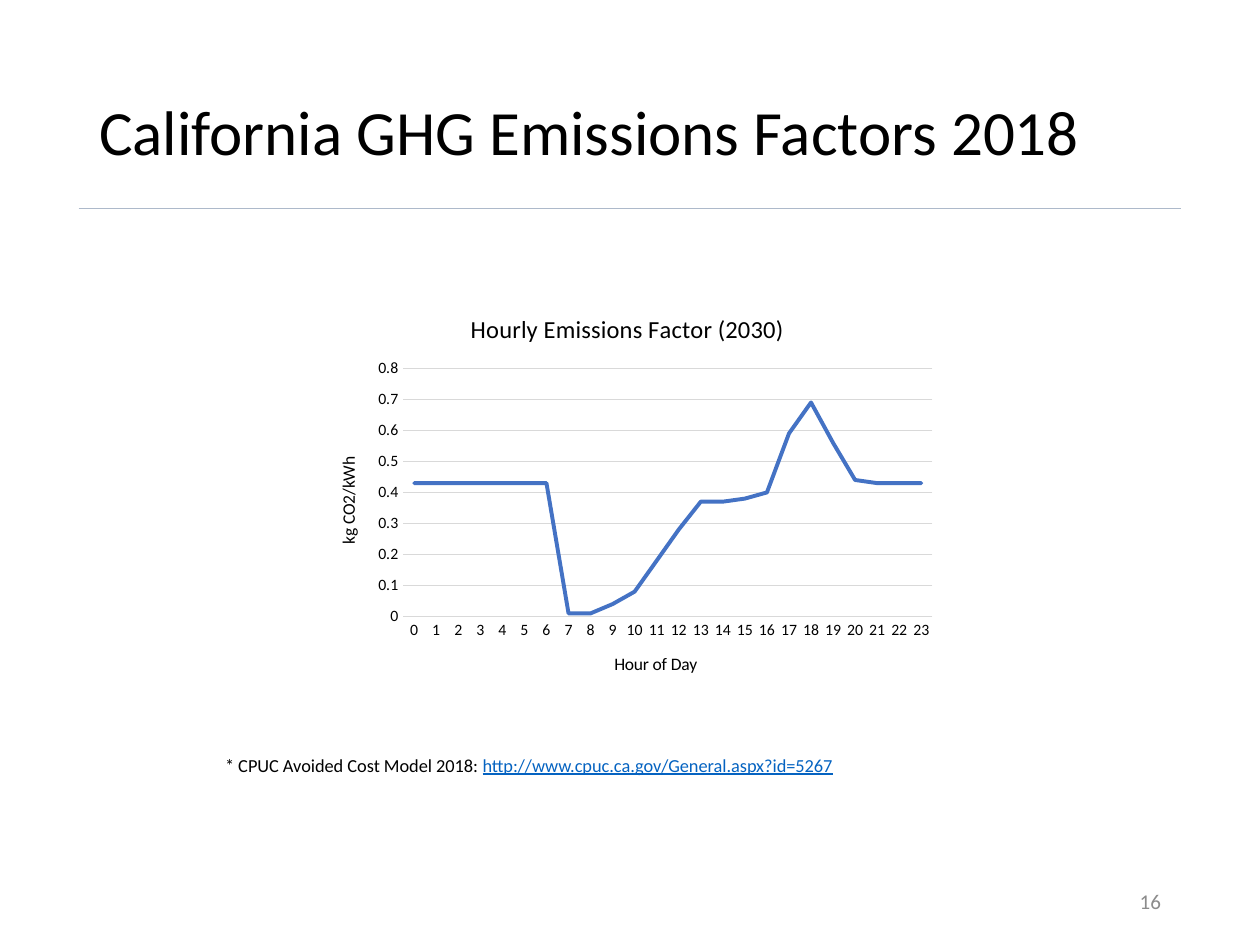
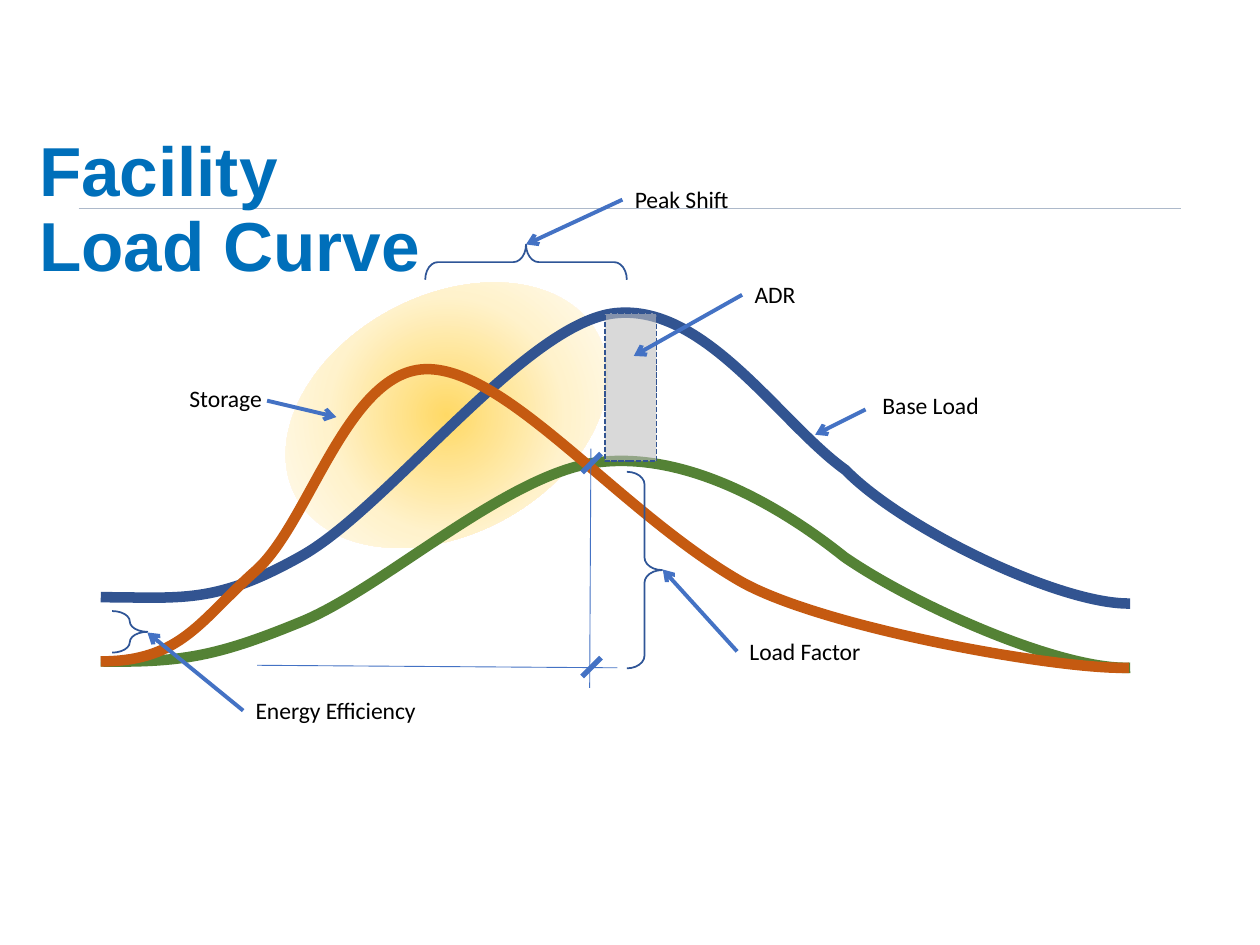
from lxml import etree
from pptx import Presentation
from pptx import util as u
from pptx.chart.data import CategoryChartData
from pptx.dml.color import RGBColor
from pptx.enum import chart as ch, dml, shapes, text
from pptx.oxml import parse_xml
from pptx.oxml.ns import nsdecls, qn

BLACK = RGBColor(0, 0, 0)
GRAY = RGBColor(0x8C, 0x8C, 0x8C)
PALE = RGBColor(0xD9, 0xD9, 0xD9)
SILVER = RGBColor(0xBF, 0xBF, 0xBF)
STEEL = RGBColor(0xAD, 0xB9, 0xCA)
BLUE = RGBColor(0x44, 0x72, 0xC4)
NAVY = RGBColor(0x32, 0x54, 0x91)
DEEP = RGBColor(0x2F, 0x55, 0x97)
GREEN = RGBColor(0x54, 0x82, 0x35)
RUST = RGBColor(0xC5, 0x5A, 0x11)
SKY = RGBColor(0x00, 0x6F, 0xBA)
LINK = RGBColor(0x05, 0x63, 0xC1)
GLOW = ((0, "FFD966"), (43, "FFF2CC"), (85, "FFFFFF"))

WIDE, HIGH = u.Inches(10), u.Inches(7.5)
CELL = WIDE / 100

HOURS = [str(h) for h in range(24)]
RATES = [0.43] * 7 + [0.01, 0.01, 0.04, 0.08, 0.18, 0.28, 0.37, 0.37, 0.38,
                      0.4, 0.59, 0.69, 0.56] + [0.44] + [0.43] * 3

BASE = [(8, 47.4), (14.4, 47.4), (17, 48), (23.8, 44.2), (30.6, 40.5),
        (41.3, 26.1), (48.5, 24.9), (55.8, 23.8), (61.8, 33.5), (67.1, 37.3),
        (71.7, 42), (84.2, 48), (89.7, 47.9)]
SAVED = [(8, 52.5), (14.4, 52.6), (17.2, 52.1), (23.8, 49.4), (30.3, 46.8),
         (40.2, 37.6), (47.4, 36.7), (54.5, 35.8), (62, 40.2), (67, 44.2),
         (72.5, 48), (84.1, 53.2), (89.7, 53)]
STORED = [(8, 52.5), (14.4, 52.5), (15.9, 49.2), (20.3, 45.3), (24.6, 41.5),
          (27.6, 29.2), (34, 29.3), (40.4, 29.4), (49.2, 40.6), (58.7, 46.1),
          (65.1, 49.8), (84.1, 53.2), (89.6, 53)]


def cells(*counts):
    """Turn counts of grid cells into lengths."""
    return [u.Emu(round(n * CELL)) for n in counts]


def style(font, size, color=BLACK, face="Calibri", bold=False):
    """Set the face, size and colour of a font."""
    font.name, font.size, font.bold = face, u.Pt(size), bold
    font.color.rgb = color


def write(slide, words, at, size, color=BLACK, face="Calibri", bold=False,
          align=None, anchor=text.MSO_ANCHOR.TOP, wrap=True, grow=False,
          space=None, inset=(1, 0.5)):
    """Add a text box; words is a string or a list of (string, colour, underline)."""
    box = slide.shapes.add_textbox(*cells(*at))
    frame = box.text_frame
    frame.word_wrap, frame.vertical_anchor = wrap, anchor
    if grow:
        frame.auto_size = text.MSO_AUTO_SIZE.SHAPE_TO_FIT_TEXT
    side, edge = cells(*inset)
    frame.margin_left = frame.margin_right = side
    frame.margin_top = frame.margin_bottom = edge
    para = frame.paragraphs[0]
    para.alignment, para.line_spacing = align, space
    parts = [(words, color, False)] if isinstance(words, str) else words
    for string, tint, under in parts:
        run = para.add_run()
        run.text = string
        style(run.font, size, tint, face, bold)
        if under:
            run.font.underline = True
    return box


def title(slide, words, at, size, **look):
    """Add a slide title."""
    write(slide, words, at, size, anchor=text.MSO_ANCHOR.MIDDLE, space=0.9, **look)


def link(slide, start, end, width, color=BLUE, arrow=False, box=None):
    """Draw a straight line, with an arrowhead or joined to a box's left side if asked."""
    line = slide.shapes.add_connector(shapes.MSO_CONNECTOR.STRAIGHT,
                                      *cells(*start, *end))
    if box is not None:
        line.begin_connect(box, 1)
    line.line.width = u.Pt(width)
    line.line.color.rgb = color
    if arrow:
        etree.SubElement(line.line._get_or_add_ln(), qn("a:tailEnd"), type="arrow")
    etree.SubElement(line._element.spPr, qn("a:effectLst"))
    return line


def label(slide, words, at, start, end, joined=True):
    """Add a label with an arrow from it."""
    box = write(slide, words, (*at, 3.3), 13.5, wrap=False, grow=True)
    link(slide, start, end, 2.25, arrow=True, box=box if joined else None)


def form(slide, kind, at, turn=0):
    """Add an unfilled preset shape without a shadow."""
    shape = slide.shapes.add_shape(kind, *cells(*at))
    shape.shadow.inherit = False
    shape.rotation = turn
    shape.fill.background()
    return shape


def brace(slide, at, turn=0):
    """Add a right brace."""
    shape = form(slide, shapes.MSO_SHAPE.RIGHT_BRACE, at, turn)
    shape.adjustments[0] = 0.36
    shape.line.color.rgb, shape.line.width = DEEP, u.Pt(1)


def glow(slide, at, turn):
    """Add an ellipse that fades out from its centre."""
    shape = form(slide, shapes.MSO_SHAPE.OVAL, at, turn)
    shape.line.fill.background()
    stops = "".join(f'<a:gs pos="{pos * 1000}"><a:srgbClr val="{tint}"/></a:gs>'
                    for pos, tint in GLOW)
    grad = parse_xml(
        f'<a:gradFill {nsdecls("a")} rotWithShape="1"><a:gsLst>{stops}</a:gsLst>'
        '<a:path path="circle"><a:fillToRect l="50000" t="50000" r="50000" '
        'b="50000"/></a:path></a:gradFill>')
    props = shape._element.spPr
    props.replace(props.find(qn("a:noFill")), grad)


def band(slide, at):
    """Add a dashed, see-through rectangle."""
    shape = form(slide, shapes.MSO_SHAPE.RECTANGLE, at)
    shape.fill.solid()
    shape.fill.fore_color.rgb = SILVER
    tint = shape._element.spPr.find(".//" + qn("a:srgbClr"))
    etree.SubElement(tint, qn("a:alpha"), val="59000")
    shape.line.color.rgb, shape.line.width = NAVY, u.Pt(1)
    shape.line.dash_style = dml.MSO_LINE.SQUARE_DOT


def curve(slide, knots, color):
    """Draw a thick open curve; every third knot lies on it, the others steer it."""
    build = slide.shapes.build_freeform(*cells(*knots[0]))
    build.add_line_segments([cells(*k) for k in knots[3::3]], close=False)
    shape = build.convert_to_shape()
    shape.shadow.inherit = False
    shape.fill.background()
    shape.line.color.rgb, shape.line.width = color, u.Pt(6)
    for i, side in enumerate(shape._element.findall(".//" + qn("a:lnTo"))):
        bend = etree.Element(qn("a:cubicBezTo"))
        for knot in knots[3 * i + 1:3 * i + 4]:
            x, y = cells(*knot)
            etree.SubElement(bend, qn("a:pt"), x=str(x - shape.left),
                             y=str(y - shape.top))
        side.getparent().replace(side, bend)


def place(node, index, inner=False, **spots):
    """Fix a chart part at shares of the chart's size."""
    for old in node.findall(qn("c:layout")):
        node.remove(old)
    tags = '<c:layoutTarget val="inner"/>' if inner else ""
    tags += '<c:xMode val="edge"/><c:yMode val="edge"/>'
    tags += "".join(f'<c:{key} val="{val}"/>' for key, val in spots.items())
    node.insert(index, parse_xml(f'<c:layout {nsdecls("c")}><c:manualLayout>{tags}'
                                 '</c:manualLayout></c:layout>'))


def head(owner, words, size, x, y):
    """Title a chart or an axis."""
    owner.has_title = True
    name = owner.chart_title if hasattr(owner, "chart_title") else owner.axis_title
    para = name.text_frame.paragraphs[0]
    para.text = words
    style(para.runs[0].font, size)
    place(name._element, 1, x=x, y=y)


def graph(slide, at):
    """Add the line chart of hourly emissions."""
    data = CategoryChartData()
    data.categories = HOURS
    data.add_series("Series 1", RATES)
    chart = slide.shapes.add_chart(ch.XL_CHART_TYPE.LINE, *cells(*at), data).chart
    style(chart.font, 10)
    chart.has_legend = False
    head(chart, "Hourly Emissions Factor (2030)", 14, 0.24, 0.04)
    hour, rate = chart.category_axis, chart.value_axis
    head(hour, "Hour of Day", 10, 0.47, 0.88)
    head(rate, "kg CO2/kWh", 10, 0.03, 0.4)
    for axis in (hour, rate):
        axis.major_tick_mark = axis.minor_tick_mark = ch.XL_TICK_MARK.NONE
        style(axis.tick_labels.font, 9)
    rate.minimum_scale, rate.maximum_scale, rate.major_unit = 0, 0.8, 0.1
    rate.format.line.fill.background()
    hour.has_major_gridlines, rate.has_major_gridlines = False, True
    for part in (hour, rate.major_gridlines):
        part.format.line.color.rgb, part.format.line.width = PALE, u.Pt(0.75)
    plot = chart.plots[0]
    plot.vary_by_categories = False
    line = plot.series[0]
    line.smooth = False
    line.marker.style = ch.XL_MARKER_STYLE.NONE
    line.format.line.color.rgb, line.format.line.width = BLUE, u.Pt(2.25)
    line.format.line._get_or_add_ln().set("cap", "rnd")
    place(chart._chartSpace.chart.plotArea, 0, inner=True,
          x=0.14, y=0.19, w=0.84, h=0.61)


def rule(slide):
    """Draw the shared rule and move it to the slide's layout."""
    line = link(slide, (6.25, 16.52), (93.75, 16.52), 0.5, STEEL)
    slide.slide_layout.shapes._spTree.append(line._element)


def factors(slide):
    """Fill the slide on emissions factors."""
    title(slide, "California GHG Emissions Factors 2018", (6.88, 5.45, 86.25, 10.6), 36)
    write(slide, "16", (70.62, 69.5, 22.5, 4), 12, color=GRAY,
          align=text.PP_ALIGN.RIGHT, anchor=text.MSO_ANCHOR.MIDDLE)
    write(slide, [("* CPUC Avoided Cost Model 2018: ", BLACK, False),
                  ("http://www.cpuc.ca.gov/General.aspx?id=5267", LINK, True),
                  (" ", BLACK, False)],
          (16.88, 59.35, 61.25, 2.8), 10.5, grow=True)
    graph(slide, (25, 23.1, 50, 32.3))


def loads(slide):
    """Fill the slide on the facility load curve."""
    glow(slide, (21.85, 23.5, 27.2, 18.9), 331.6)
    curve(slide, BASE, NAVY)
    title(slide, "Facility Load Curve", (2.4, 11.35, 33.6, 10.9), 39.6,
          color=SKY, face="Arial", bold=True, inset=(0.7, 0.4))
    curve(slide, SAVED, GREEN)
    curve(slide, STORED, RUST)
    band(slide, (48, 24.85, 4.1, 11.75))
    label(slide, "Base Load", (69.05, 30.5, 9.8), (68.7, 32.5), (64.7, 34.5), False)
    label(slide, "Storage", (14.05, 30, 7.9), (21.2, 31.8), (26.7, 33.1), False)
    label(slide, "ADR", (58.9, 21.75, 5.3), (58.9, 23.4), (50.3, 28.25))
    link(slide, (20.4, 52.8), (49, 53), 0.5)
    link(slide, (46.8, 54.6), (46.9, 35.6), 0.5)
    for low in (37.5, 53.7):
        link(slide, (46.2, low), (47.7, low - 1.5), 3)
    label(slide, "Load Factor", (58.5, 50.05, 11), (58.5, 51.7), (52.6, 45.2))
    brace(slide, (49.75, 37.45, 2.8, 15.6))
    label(slide, "Energy Efficiency", (19.3, 54.75, 15), (19.3, 56.4), (11.7, 50.2))
    brace(slide, (8.9, 48.5, 2.8, 3.3))
    label(slide, "Peak Shift", (49.4, 14.2, 9.6), (49.4, 15.9), (41.75, 19.4))
    brace(slide, (40.35, 12.8, 2.8, 16), 270)


def main():
    """Build and save the deck."""
    deck = Presentation()
    deck.slide_width, deck.slide_height = WIDE, HIGH
    first, second = (deck.slides.add_slide(deck.slide_layouts[6]) for _ in range(2))
    rule(first)
    factors(first)
    loads(second)
    deck.save("out.pptx")


if __name__ == "__main__":
    main()
